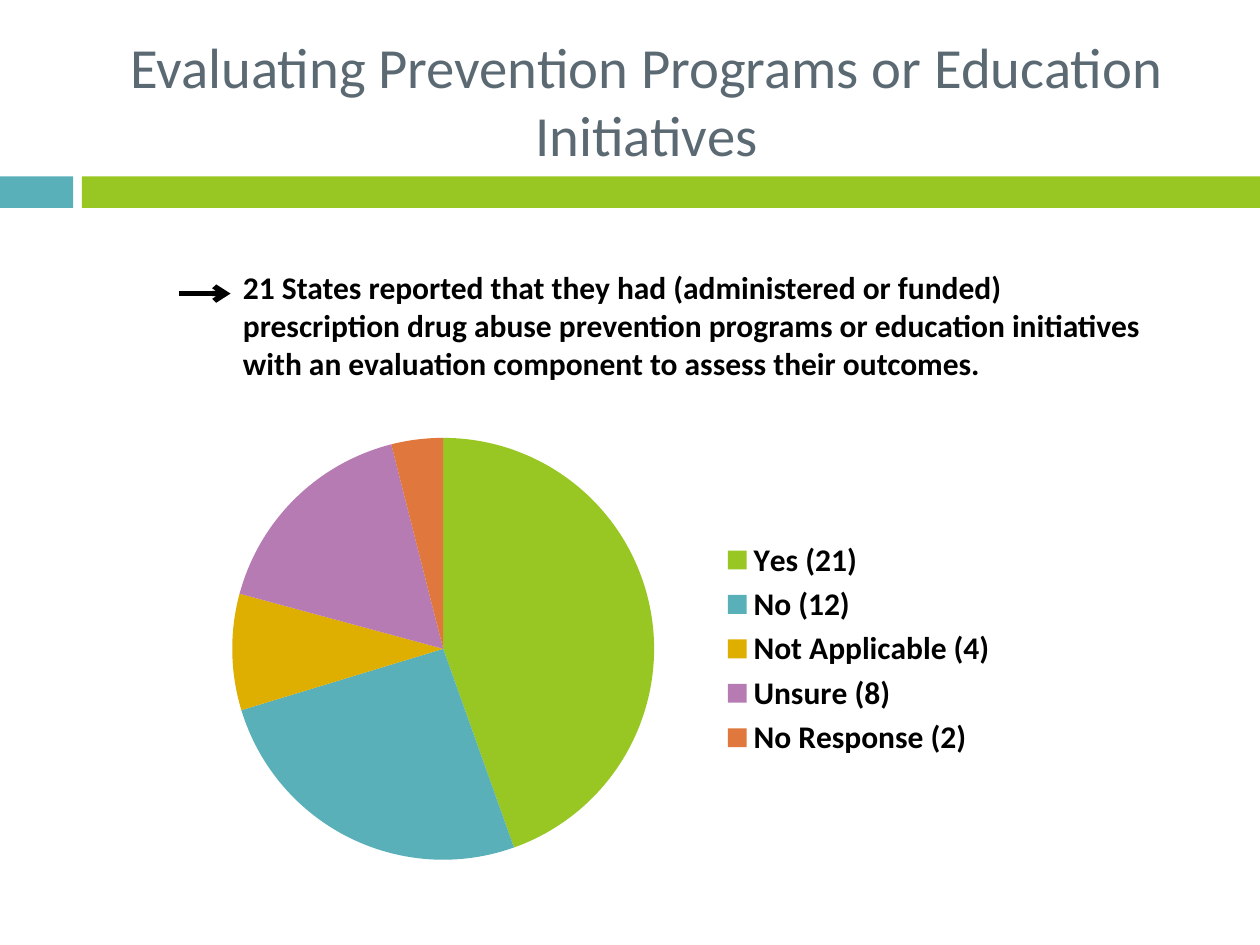
from lxml import etree
from pptx import Presentation
from pptx.chart.data import CategoryChartData
from pptx.dml.color import RGBColor
from pptx.enum.chart import XL_CHART_TYPE, XL_LEGEND_POSITION
from pptx.enum.shapes import MSO_CONNECTOR, MSO_SHAPE
from pptx.enum.text import MSO_ANCHOR, PP_ALIGN
from pptx.oxml.ns import qn
from pptx.util import Inches, Pt

PIE = XL_CHART_TYPE.PIE
RIGHT = XL_LEGEND_POSITION.RIGHT
STRAIGHT = MSO_CONNECTOR.STRAIGHT
RECT = MSO_SHAPE.RECTANGLE
MIDDLE, TOP = MSO_ANCHOR.MIDDLE, MSO_ANCHOR.TOP
CENTER, LEFT = PP_ALIGN.CENTER, PP_ALIGN.LEFT

TITLE = "Evaluating Prevention Programs or Education Initiatives"
FINDING = (
    "21 States reported that they had (administered or funded) "
    "prescription drug abuse prevention programs or education initiatives "
    "with an evaluation component to assess their outcomes."
)
BANDS = [(0, 0.58, "59B0B9"), (0.65, 9.35, "98C723")]
ANSWERS = [
    ("Yes (21)", 45, "98C723"),
    ("No (12)", 26, "59B0B9"),
    ("Not Applicable (4)", 9, "DEAE00"),
    ("Unsure (8)", 17, "B77BB4"),
    ("No Response (2)", 4, "E0773C"),
]
PLOT_AREA = {"x": 0.07, "y": 0.04, "w": 0.51, "h": 0.92}
TITLE_FONT = {"name": "Calibri", "size": Pt(32.4), "bold": False}
BODY_FONT = {"name": "Calibri", "size": Pt(18), "bold": True}


def rgb(value):
    return RGBColor.from_string(value)


def set_font(font, values, color):
    for name, value in values.items():
        setattr(font, name, value)
    font.color.rgb = rgb(color)


def write(sp, text, values, color, align, anchor):
    tf = sp.text_frame
    tf.word_wrap = True
    tf.vertical_anchor = anchor
    p = tf.paragraphs[0]
    p.alignment = align
    r = p.add_run()
    r.text = text
    set_font(r.font, values, color)


def add_band(s, left, width, color):
    sp = s.shapes.add_shape(RECT, Inches(left), Inches(1.4), Inches(width), Inches(0.25))
    sp.shadow.inherit = False
    sp.fill.solid()
    sp.fill.fore_color.rgb = rgb(color)
    sp.line.fill.background()


def add_pie(s):
    data = CategoryChartData()
    data.categories = [name for name, _, _ in ANSWERS]
    data.add_series("Series 1", [value for _, value, _ in ANSWERS])
    box = [Inches(v) for v in (1.35, 3.33, 6.67, 3.64)]
    chart = s.shapes.add_chart(PIE, *box, data).chart
    chart.has_title = False
    set_font(chart.font, BODY_FONT, "000000")
    chart.has_legend = True
    chart.legend.position = RIGHT
    chart.legend.include_in_layout = False
    set_font(chart.legend.font, BODY_FONT, "000000")
    plot = chart.plots[0]
    plot.vary_by_categories = True
    for i, (_, _, color) in enumerate(ANSWERS):
        fill = plot.series[0].points[i].format.fill
        fill.solid()
        fill.fore_color.rgb = rgb(color)
    area = chart.element.find(".//" + qn("c:plotArea"))
    for old in area.findall(qn("c:layout")):
        area.remove(old)
    layout = etree.Element(qn("c:layout"))
    area.insert(0, layout)
    manual = etree.SubElement(layout, qn("c:manualLayout"))
    settings = {"layoutTarget": "inner", "xMode": "edge", "yMode": "edge", **PLOT_AREA}
    for tag, value in settings.items():
        etree.SubElement(manual, qn("c:" + tag), val=str(value))


def add_arrow(s):
    line = s.shapes.add_connector(
        STRAIGHT, Inches(1.42), Inches(2.33), Inches(1.83), Inches(2.33)
    )
    line.line.color.rgb = rgb("000000")
    line.line.width = Pt(3)
    etree.SubElement(line.line._get_or_add_ln(), qn("a:tailEnd"), type="arrow")
    etree.SubElement(line.element.spPr, qn("a:effectLst"))


def main():
    prs = Presentation()
    prs.slide_width, prs.slide_height = Inches(10), Inches(7.5)
    s = prs.slides.add_slide(prs.slide_layouts[5])
    for band in BANDS:
        add_band(s, *band)
    title = s.shapes.title
    title.left, title.top = Inches(0.67), Inches(0.25)
    title.width, title.height = Inches(8.92), Inches(1.08)
    write(title, TITLE, TITLE_FONT, "5B6973", CENTER, MIDDLE)
    add_pie(s)
    finding = s.shapes.add_textbox(Inches(1.83), Inches(2.08), Inches(7.33), Inches(1.01))
    write(finding, FINDING, BODY_FONT, "000000", LEFT, TOP)
    add_arrow(s)
    prs.save("out.pptx")


if __name__ == "__main__":
    main()
